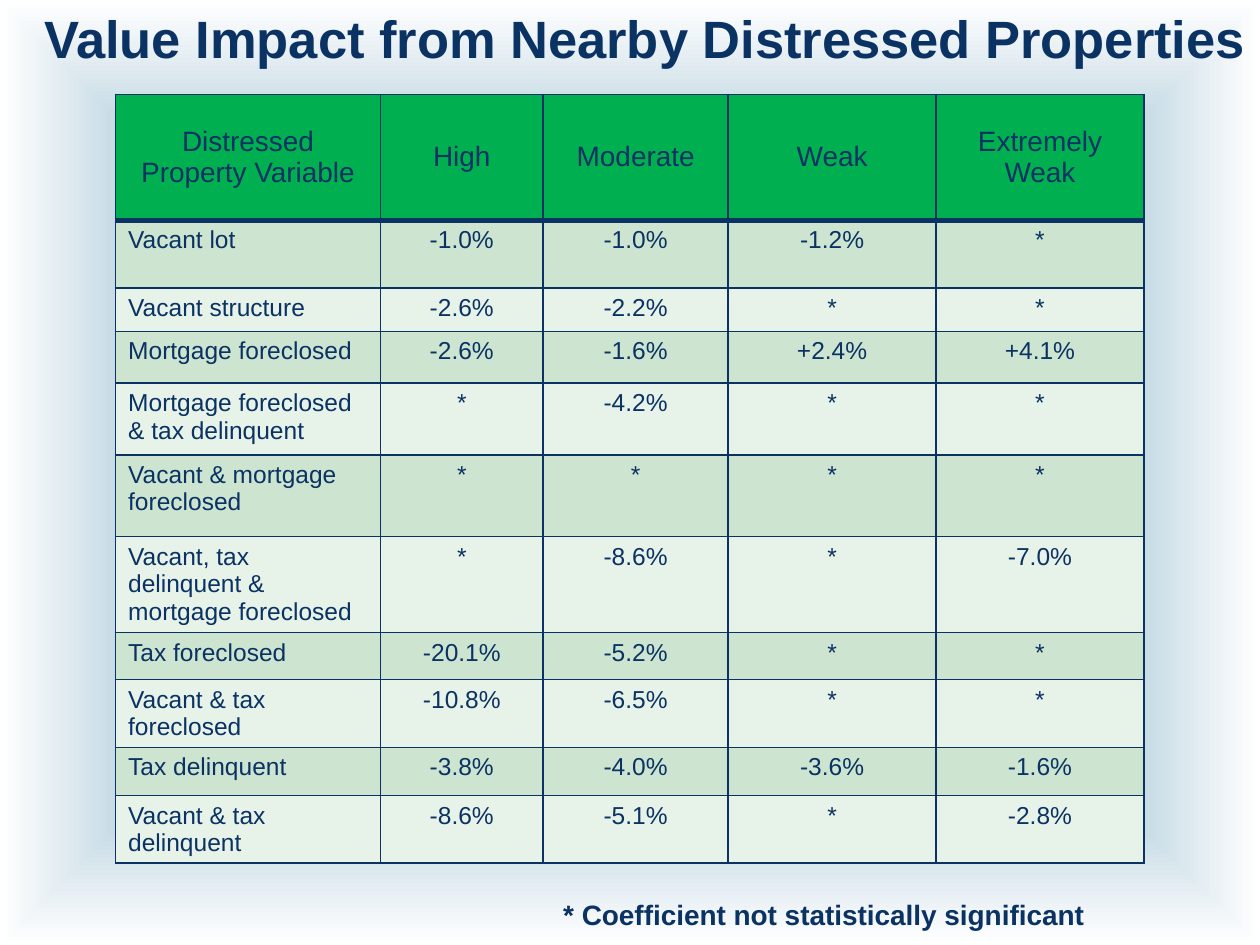
from lxml import etree
from pptx import Presentation
from pptx.dml.color import RGBColor
from pptx.enum.text import MSO_ANCHOR, PP_ALIGN
from pptx.oxml import parse_xml
from pptx.oxml.ns import nsdecls, qn
from pptx.util import Cm, Pt

LEFT, MID = PP_ALIGN.LEFT, PP_ALIGN.CENTER
TOP, CENTRE = MSO_ANCHOR.TOP, MSO_ANCHOR.MIDDLE
NAVY = RGBColor(0x0A, 0x32, 0x62)
GREEN = RGBColor(0x00, 0xB0, 0x50)
BANDS = (RGBColor(0xCC, 0xE4, 0xD0), RGBColor(0xE7, 0xF2, 0xE9))
BLUE = RGBColor(0x5F, 0x98, 0xB5)
WHITE = RGBColor(0xFF, 0xFF, 0xFF)

# Content
TITLE = "Value Impact from Nearby Distressed Properties"
NOTE = "* Coefficient not statistically significant"
HEAD = ("Distressed Property Variable", "High", "Moderate", "Weak", "Extremely Weak")
HEAD_H = 2.54
ROWS = [  # height in cm, then the cells
    (1.37, "Vacant lot", "-1.0%", "-1.0%", "-1.2%", "*"),
    (0.87, "Vacant structure", "-2.6%", "-2.2%", "*", "*"),
    (1.04, "Mortgage foreclosed", "-2.6%", "-1.6%", "+2.4%", "+4.1%"),
    (1.45, "Mortgage foreclosed & tax delinquent", "*", "-4.2%", "*", "*"),
    (1.65, "Vacant & mortgage foreclosed", "*", "*", "*", "*"),
    (1.93, "Vacant, tax delinquent & mortgage foreclosed", "*", "-8.6%", "*", "-7.0%"),
    (0.95, "Tax foreclosed", "-20.1%", "-5.2%", "*", "*"),
    (1.36, "Vacant & tax foreclosed", "-10.8%", "-6.5%", "*", "*"),
    (0.97, "Tax delinquent", "-3.8%", "-4.0%", "-3.6%", "-1.6%"),
    (1.36, "Vacant & tax delinquent", "-8.6%", "-5.1%", "*", "-2.8%"),
]
WIDTHS = (5.34, 3.28, 3.73, 4.19, 4.19)


def write(frame, text, align, size, bold=False):
    para = frame.paragraphs[0]
    para.alignment = align
    run = para.add_run()
    run.text = text
    look = {"name": "Arial", "size": Pt(size), "bold": bold}
    for key, value in look.items():
        setattr(run.font, key, value)
    run.font.color.rgb = NAVY


def add_text(slide, text, place, align, anchor, size):
    frame = slide.shapes.add_textbox(*map(Cm, place)).text_frame
    frame.word_wrap = True
    frame.vertical_anchor = anchor
    write(frame, text, align, size, True)


def add_edges(cell, base):
    props = cell._tc.get_or_add_tcPr()
    for side, width in (("L", 1), ("R", 1), ("T", 1), ("B", base)):
        line = etree.SubElement(props, qn("a:ln" + side), w=str(Pt(width)))
        fill = etree.SubElement(line, qn("a:solidFill"))
        etree.SubElement(fill, qn("a:srgbClr"), val=str(NAVY))


def add_glow(slide):
    slide._element.cSld.insert(0, parse_xml(
        f'<p:bg {nsdecls("p", "a")}><p:bgPr><a:gradFill rotWithShape="1"><a:gsLst>'
        f'<a:gs pos="30000"><a:srgbClr val="{BLUE}"><a:alpha val="60000"/></a:srgbClr></a:gs>'
        f'<a:gs pos="100000"><a:srgbClr val="{WHITE}"/></a:gs></a:gsLst>'
        '<a:path path="rect"><a:fillToRect l="50000" t="50000" r="50000" b="50000"/></a:path>'
        '</a:gradFill><a:effectLst/></p:bgPr></p:bg>'))


def add_grid(slide):
    lines = [(HEAD_H, *HEAD)] + ROWS
    table = slide.shapes.add_table(
        len(lines), len(WIDTHS), Cm(2.33), Cm(1.9),
        Cm(sum(WIDTHS)), Cm(sum(line[0] for line in lines))).table
    for col, width in zip(table.columns, WIDTHS):
        col.width = Cm(width)
    for r, (height, *texts) in enumerate(lines):
        table.rows[r].height = Cm(height)
        top = r == 0
        for c, text in enumerate(texts):
            cell = table.cell(r, c)
            add_edges(cell, 3 if top else 1)
            cell.fill.solid()
            cell.fill.fore_color.rgb = GREEN if top else BANDS[(r - 1) % 2]
            cell.vertical_anchor = CENTRE if top else TOP
            write(cell.text_frame, text, MID if top or c else LEFT, 16 if top else 14)


def main():
    deck = Presentation()
    deck.slide_width, deck.slide_height = Cm(25.4), Cm(19.05)
    slide = deck.slides.add_slide(deck.slide_layouts[6])
    add_glow(slide)
    add_grid(slide)
    add_text(slide, TITLE, (0.64, 0, 24.76, 1.54), LEFT, TOP, 30)
    add_text(slide, NOTE, (7.82, 17.83, 17.58, 1.22), MID, CENTRE, 16)
    deck.save("out.pptx")


if __name__ == "__main__":
    main()
